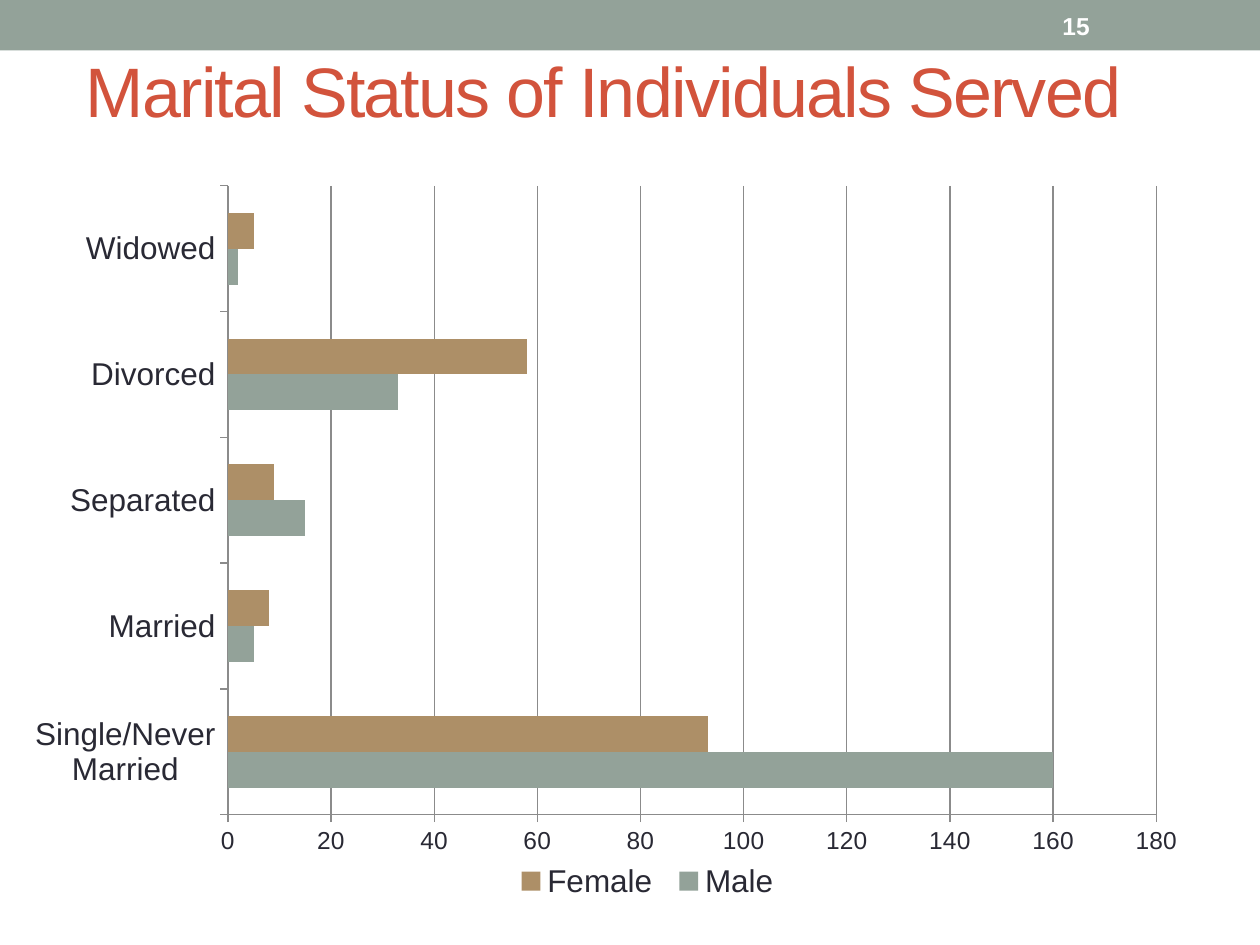
"""Build the slide showing marital status of individuals served by sex."""
from dataclasses import dataclass

from lxml.etree import SubElement
from pptx import Presentation
from pptx.chart.data import CategoryChartData
from pptx.dml.color import RGBColor
from pptx.enum.chart import XL_CHART_TYPE as ChartType
from pptx.enum.chart import XL_LEGEND_POSITION as LegendPosition
from pptx.enum.chart import XL_TICK_MARK as TickMark
from pptx.enum.shapes import MSO_SHAPE as Shape
from pptx.enum.text import MSO_ANCHOR as Anchor
from pptx.oxml.ns import qn
from pptx.util import Pt

FONT = "Arial"
SAGE, TAN, RED, INK, GRID, WHITE = (
    "93A299", "AD8F67", "D2533C", "292934", "8B8B8B", "FFFFFF")
STATUSES = ("Single/Never Married", "Married", "Separated", "Divorced", "Widowed")


@dataclass(frozen=True)
class Box:
    left: float
    top: float
    width: float
    height: float

    def points(self) -> tuple:
        return tuple(Pt(v) for v in (self.left, self.top, self.width, self.height))


@dataclass(frozen=True)
class Label:
    text: str
    box: Box
    size: float
    color: str
    bold: bool = False
    spacing: float = 0


@dataclass(frozen=True)
class Group:
    name: str
    counts: tuple
    color: str


LABELS = (
    Label("Marital Status of Individuals Served", Box(42, 6, 648, 90), 40, RED, spacing=-1),
    Label("15", Box(600, 1.5, 84, 26), 14, WHITE, bold=True),
)
GROUPS = (
    Group("Male", (160, 5, 15, 33, 2), SAGE),
    Group("Female", (93, 8, 9, 58, 5), TAN),
)


def rgb(value: str) -> RGBColor:
    return RGBColor.from_string(value)


def style_font(font, size: float, color: str = INK, bold: bool = False) -> None:
    font.name, font.size, font.bold = FONT, Pt(size), bold
    font.color.rgb = rgb(color)


def add_band(slide, box: Box, color: str) -> None:
    band = slide.shapes.add_shape(Shape.RECTANGLE, *box.points())
    band.shadow.inherit = False
    band.fill.solid()
    band.fill.fore_color.rgb = rgb(color)
    band.line.fill.background()


def add_label(slide, label: Label) -> None:
    frame = slide.shapes.add_textbox(*label.box.points()).text_frame
    frame.word_wrap = True
    frame.vertical_anchor = Anchor.MIDDLE
    run = frame.paragraphs[0].add_run()
    run.text = label.text
    style_font(run.font, label.size, label.color, label.bold)
    if label.spacing:
        run.font._element.set("spc", str(int(label.spacing * 100)))


def set_layout(parent, index: int, area: Box, inner: bool = False) -> None:
    for old in parent.findall(qn("c:layout")):
        parent.remove(old)
    layout = parent.makeelement(qn("c:layout"))
    parent.insert(index, layout)
    manual = SubElement(layout, qn("c:manualLayout"))
    settings = [("layoutTarget", "inner")] if inner else []
    settings += [("xMode", "edge"), ("yMode", "edge"), ("x", area.left),
                 ("y", area.top), ("w", area.width), ("h", area.height)]
    for tag, value in settings:
        SubElement(manual, qn(f"c:{tag}")).set("val", str(value))


def style_axis(axis, size: float) -> None:
    axis.major_tick_mark, axis.minor_tick_mark = TickMark.OUTSIDE, TickMark.NONE
    axis.format.line.color.rgb = rgb(GRID)
    axis.format.line.width = Pt(0.75)
    style_font(axis.tick_labels.font, size)


def add_status_chart(slide, box: Box) -> None:
    data = CategoryChartData(number_format="General")
    data.categories = STATUSES
    for group in GROUPS:
        data.add_series(group.name, group.counts)
    chart = slide.shapes.add_chart(ChartType.BAR_CLUSTERED, *box.points(), data).chart
    chart.has_title = False
    style_font(chart.font, 10)

    plot = chart.plots[0]
    plot.gap_width, plot.overlap, plot.vary_by_categories = 150, 0, False
    for series, group in zip(plot.series, GROUPS):
        series.format.fill.solid()
        series.format.fill.fore_color.rgb = rgb(group.color)
        series.invert_if_negative = False

    style_axis(chart.category_axis, 18)
    counts_axis = chart.value_axis
    style_axis(counts_axis, 14)
    counts_axis.minimum_scale, counts_axis.maximum_scale = 0, 180
    counts_axis.major_unit = 20
    counts_axis.has_major_gridlines = True
    grid = counts_axis.major_gridlines.format.line
    grid.color.rgb, grid.width = rgb(GRID), Pt(0.75)

    chart.has_legend = True
    legend = chart.legend
    legend.position = LegendPosition.RIGHT
    legend.include_in_layout = False
    style_font(legend.font, 18)
    set_layout(legend._element, 1, Box(0.39, 0.93, 0.22, 0.06))
    plot_area = chart._chartSpace.chart.plotArea
    set_layout(plot_area, 0, Box(0.176, 0.1, 0.717, 0.778), inner=True)


def main() -> None:
    deck = Presentation()
    deck.slide_width, deck.slide_height = Pt(720), Pt(540)
    slide = deck.slides.add_slide(deck.slide_layouts[6])
    add_band(slide, Box(0, 0, 720, 28.8), SAGE)
    for label in LABELS:
        add_label(slide, label)
    add_status_chart(slide, Box(0, 60, 740, 462))
    deck.save("out.pptx")


if __name__ == "__main__":
    main()
